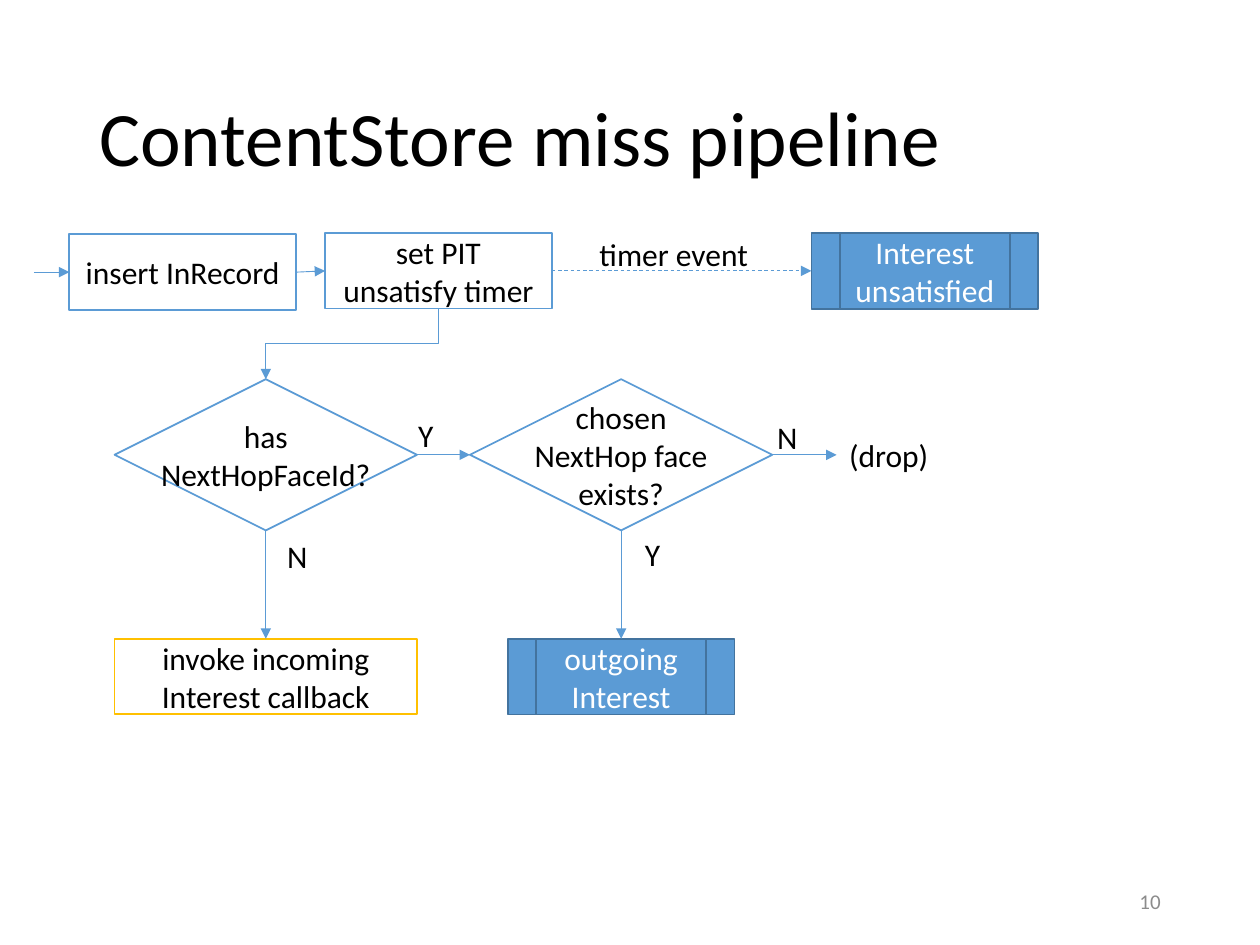
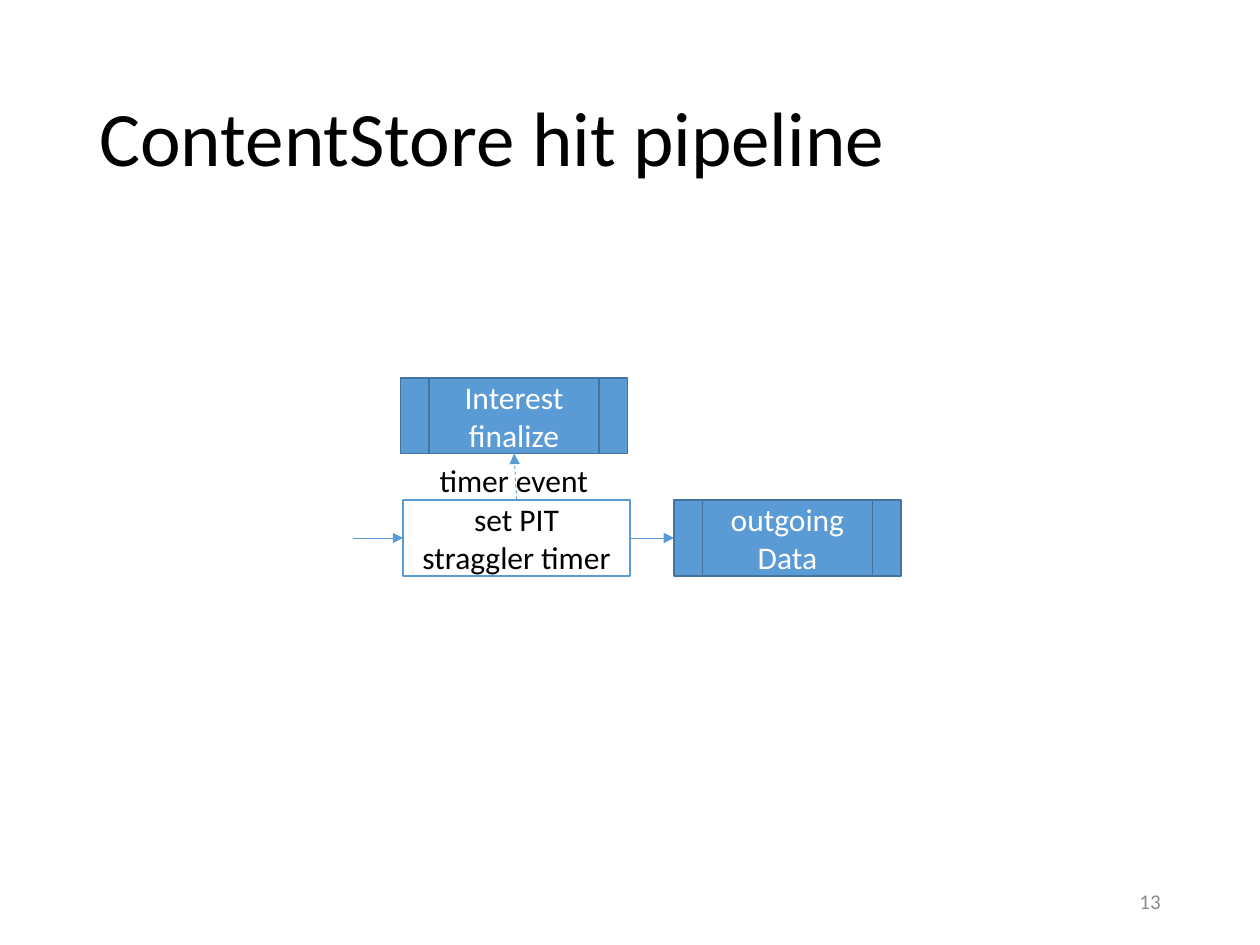
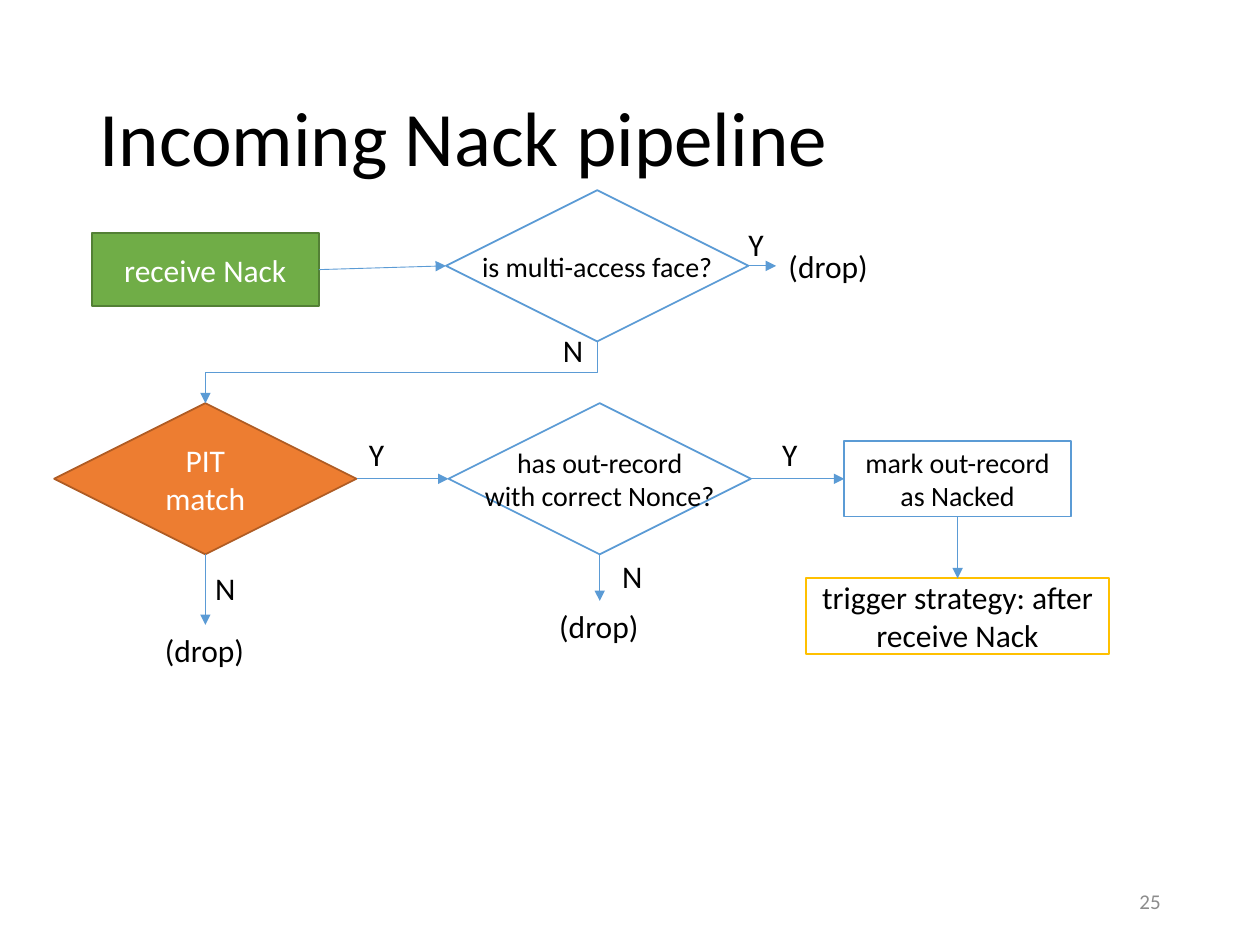
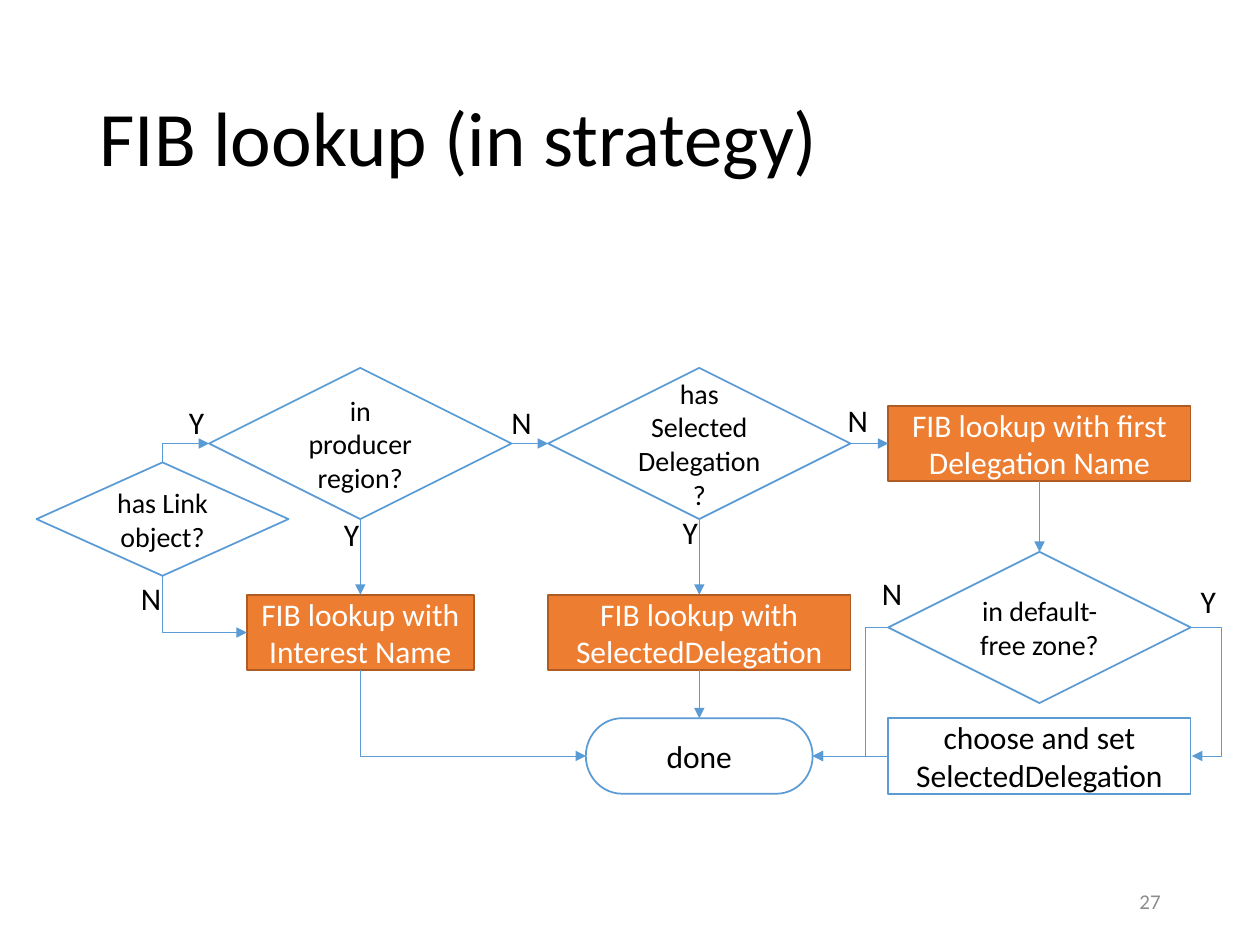
import dataclasses
import enum
import typing

import lxml.etree
import pptx
import pptx.dml.color
import pptx.enum.dml
import pptx.enum.shapes
import pptx.enum.text
import pptx.oxml.ns
import pptx.util

# The slide is a grid of 100 columns and 75 rows of square cells.
CELL = pptx.util.Inches(0.1)
COLUMNS, ROWS = 100, 75
FONT = "Calibri"
COLOURS = {
    "white": "FFFFFF", "black": "000000", "grey": "8C8C8C",
    "blue": "5B9BD5", "dark blue": "43739E", "gold": "FFC000",
    "orange": "ED7D31", "dark orange": "AF5C24",
    "green": "70AD47", "dark green": "538035",
}
Preset = pptx.enum.shapes.MSO_SHAPE
Align = pptx.enum.text.PP_ALIGN


class Side(enum.IntEnum):
    """Connection sites, numbered as the preset shapes number them."""
    TOP = 0
    LEFT = 1
    BOTTOM = 2
    RIGHT = 3


class Point(typing.NamedTuple):
    col: float
    row: float


class Size(typing.NamedTuple):
    cols: float
    rows: float


BOX, WIDE, DIAMOND = Size(18, 6), Size(24, 6), Size(24, 12)
LETTER_SIZES = {"Y": Size(3.2, 4), "N": Size(3.6, 4),
                "(drop)": Size(8.4, 4), "timer event": Size(14, 4)}


@dataclasses.dataclass(frozen=True)
class Style:
    preset: Preset
    fill: str = "white"
    line: str = "blue"
    text: str = "black"


STEP = Style(Preset.RECTANGLE)
CALLBACK = Style(Preset.RECTANGLE, line="gold")
TABLE_STEP = Style(Preset.RECTANGLE, "orange", "dark orange", "white")
ENTRY = Style(Preset.RECTANGLE, "green", "dark green", "white")
PIPELINE = Style(Preset.FLOWCHART_PREDEFINED_PROCESS, "blue", "dark blue", "white")
DECISION = Style(Preset.FLOWCHART_DECISION)
TABLE_DECISION = Style(Preset.FLOWCHART_DECISION, "orange", "dark orange", "white")
END = Style(Preset.FLOWCHART_TERMINATOR)


@dataclasses.dataclass(frozen=True)
class Node:
    key: str
    style: Style
    text: str
    at: Point
    size: Size = BOX
    points: int = 18
    wrap: bool = True


@dataclasses.dataclass(frozen=True)
class Label:
    text: str
    at: Point
    key: str = ""


@dataclasses.dataclass(frozen=True)
class Link:
    """An arrow between two nodes, given by key, or free points."""
    start: str | Point
    end: str | Point
    leave: Side = Side.RIGHT
    enter: Side = Side.LEFT
    dashed: bool = False
    elbow: str = ""
    bend: float | None = None


@dataclasses.dataclass(frozen=True)
class Flow:
    title: str
    number: int
    nodes: list[Node]
    links: list[Link]
    labels: list[Label]


DOWN = {"leave": Side.BOTTOM, "enter": Side.TOP}
TURN = {"leave": Side.BOTTOM, "elbow": "bentConnector2"}
STEP_DOWN = {**DOWN, "elbow": "bentConnector3"}

FLOWS = [
    Flow(
        "ContentStore miss pipeline", 10,
        [
            Node("insert", STEP, "insert InRecord", Point(5.5, 18.6)),
            Node("timer", STEP, "set PIT unsatisfy timer", Point(25.8, 18.5)),
            Node("unsatisfied", PIPELINE, "Interest unsatisfied", Point(64.4, 18.5)),
            Node("has hop", DECISION, "has\vNextHopFaceId?", Point(9.1, 30.1), DIAMOND, wrap=False),
            Node("face exists", DECISION, "chosen\vNextHop face\vexists?", Point(37.3, 30.1),
                 DIAMOND, wrap=False),
            Node("callback", CALLBACK, "invoke incoming Interest callback", Point(9.1, 50.7), WIDE),
            Node("outgoing", PIPELINE, "outgoing Interest", Point(40.3, 50.7)),
        ],
        [
            Link(Point(2.7, 21.6), "insert"),
            Link("insert", "timer"),
            Link("timer", "unsatisfied", dashed=True),
            Link("timer", "has hop", **STEP_DOWN),
            Link("has hop", "callback", **DOWN),
            Link("has hop", "face exists"),
            Link("face exists", "outgoing", **DOWN),
            Link("face exists", "drop"),
        ],
        [
            Label("timer event", Point(46.6, 18.2)),
            Label("(drop)", Point(66.4, 34.1), "drop"),
            Label("N", Point(60.7, 32.7)),
            Label("Y", Point(50.2, 42)),
            Label("Y", Point(32.2, 32.5)),
            Label("N", Point(21.8, 42.1)),
        ],
    ),
    Flow(
        "ContentStore hit pipeline", 13,
        [
            Node("outgoing", PIPELINE, "outgoing Data", Point(53.5, 39.7)),
            Node("timer", STEP, "set PIT straggler timer", Point(32, 39.7)),
            Node("finalize", PIPELINE, "Interest finalize", Point(31.8, 30)),
        ],
        [
            Link("timer", "finalize", Side.TOP, Side.BOTTOM, dashed=True),
            Link("timer", "outgoing"),
            Link(Point(28, 42.7), "timer"),
        ],
        [Label("timer event", Point(33.9, 36.1))],
    ),
    Flow(
        "Incoming Nack pipeline", 25,
        [
            Node("match", TABLE_DECISION, "PIT match", Point(4.3, 32), DIAMOND),
            Node("receive", ENTRY, "receive Nack", Point(7.3, 18.5), Size(18, 5.8)),
            Node("strategy", CALLBACK, "trigger strategy: after receive Nack",
                 Point(64, 45.9), WIDE),
            Node("mark", STEP, "mark out-record as Nacked", Point(67, 35), points=16),
            Node("nonce", DECISION, "has out-record\vwith correct Nonce?", Point(35.6, 32),
                 DIAMOND, 16, False),
            Node("multi-access", DECISION, "is multi-access face?", Point(35.4, 15.1),
                 DIAMOND, 16, False),
        ],
        [
            Link("receive", "multi-access"),
            Link("multi-access", "face drop"),
            Link("multi-access", "match", **STEP_DOWN),
            Link("match", "match drop", **DOWN),
            Link("match", "nonce"),
            Link("nonce", "nonce drop", **DOWN),
            Link("nonce", "mark"),
            Link("mark", "strategy", **DOWN),
        ],
        [
            Label("(drop)", Point(12.1, 49.6), "match drop"),
            Label("N", Point(16.1, 44.7)),
            Label("Y", Point(28.3, 34)),
            Label("(drop)", Point(43.4, 47.7), "nonce drop"),
            Label("N", Point(48.4, 43.7)),
            Label("Y", Point(61.1, 34)),
            Label("N", Point(43.7, 25.8)),
            Label("Y", Point(58.4, 17.4)),
            Label("(drop)", Point(61.6, 19.1), "face drop"),
        ],
    ),
    Flow(
        "FIB lookup (in strategy)", 27,
        [
            Node("by interest", TABLE_STEP, "FIB lookup with Interest Name", Point(19.6, 47.2)),
            Node("done", END, "done", Point(46.5, 57)),
            Node("in region", DECISION, "in producer region?", Point(16.6, 29.2), DIAMOND, 16),
            Node("has selected", DECISION, "has Selected\nDelegation?", Point(43.5, 29.2),
                 DIAMOND, 16),
            Node("by selected", TABLE_STEP, "FIB lookup with SelectedDelegation",
                 Point(43.5, 47.2), WIDE),
            Node("choose", STEP, "choose and set SelectedDelegation", Point(70.5, 57), WIDE),
            Node("by first", TABLE_STEP, "FIB lookup with first Delegation Name",
                 Point(70.5, 32.2), WIDE),
            Node("in zone", DECISION, "in default-free zone?", Point(70.5, 43.8), DIAMOND, 16),
            Node("has link", DECISION, "has Link object?", Point(2.9, 36.7), Size(20, 9), 16),
        ],
        [
            Link("has link", "in region", Side.TOP, elbow="bentConnector2"),
            Link("has link", "by interest", **TURN),
            Link("in region", "by interest", **DOWN),
            Link("in region", "has selected"),
            Link("has selected", "by selected", **DOWN),
            Link("has selected", "by first"),
            Link("by first", "in zone", **DOWN),
            Link("by interest", "done", **TURN),
            Link("by selected", "done", **DOWN),
            Link("choose", "done", Side.LEFT, Side.RIGHT),
            Link("in zone", "done", Side.LEFT, Side.RIGHT, elbow="bentConnector3", bend=68.7),
            Link("in zone", Point(94.6, 60), elbow="bentConnector3", bend=97),
        ],
        [
            Label("Y", Point(26.3, 40.4)),
            Label("N", Point(39.6, 31.5)),
            Label("N", Point(66.3, 31.3)),
            Label("Y", Point(53.2, 40.2)),
            Label("Y", Point(94.3, 45.7)),
            Label("N", Point(69, 45.1)),
            Label("N", Point(10.2, 45.5)),
            Label("Y", Point(14, 31.5)),
        ],
    ),
]


def cells(count: float) -> int:
    return round(count * CELL)


def colour(name: str) -> pptx.dml.color.RGBColor:
    return pptx.dml.color.RGBColor.from_string(COLOURS[name])


def write(shape, text: str, points: int, ink: str, align=Align.LEFT,
          wrap: bool = True, middle: bool = True, spacing: float | None = None) -> None:
    frame = shape.text_frame
    frame.text = text
    frame.word_wrap = wrap
    anchors = pptx.enum.text.MSO_ANCHOR
    frame.vertical_anchor = anchors.MIDDLE if middle else anchors.TOP
    for paragraph in frame.paragraphs:
        paragraph.alignment = align
        paragraph.line_spacing = spacing
        paragraph.font.name = FONT
        paragraph.font.size = pptx.util.Pt(points)
        paragraph.font.color.rgb = colour(ink)


def add_text_area(slide, at: Point, size: Size):
    return slide.shapes.add_textbox(*map(cells, (*at, *size)))


def draw_frame(slide, flow: Flow) -> None:
    """Draw what every slide has: its title and its number."""
    title = add_text_area(slide, Point(6.9, 4), Size(86.2, 14.5))
    write(title, flow.title, 44, "black", spacing=0.9)
    number = add_text_area(slide, Point(70.6, 69.5), Size(22.5, 4))
    write(number, str(flow.number), 12, "grey", Align.RIGHT)


def draw_node(slide, node: Node):
    shape = slide.shapes.add_shape(node.style.preset, *map(cells, (*node.at, *node.size)))
    shape.shadow.inherit = False
    shape.fill.solid()
    shape.fill.fore_color.rgb = colour(node.style.fill)
    shape.line.color.rgb = colour(node.style.line)
    shape.line.width = pptx.util.Pt(1)
    write(shape, node.text, node.points, node.style.text, Align.CENTER, node.wrap)
    return shape


def draw_label(slide, label: Label):
    area = add_text_area(slide, label.at, LETTER_SIZES[label.text])
    write(area, label.text, 18, "black", wrap=False, middle=False)
    area.text_frame.auto_size = pptx.enum.text.MSO_AUTO_SIZE.SHAPE_TO_FIT_TEXT
    return area


def shape_elbow(connector, link: Link) -> None:
    """Give the connector its preset, its bend and, if it leaves vertically, its turn."""
    properties = connector._element.spPr
    geometry = properties.find(pptx.oxml.ns.qn("a:prstGeom"))
    geometry.set("prst", link.elbow)
    dx = connector.end_x - connector.begin_x
    dy = connector.end_y - connector.begin_y
    if link.bend is not None:
        share = (cells(link.bend) - connector.begin_x) / dx
        guides = geometry.find(pptx.oxml.ns.qn("a:avLst"))
        lxml.etree.SubElement(guides, pptx.oxml.ns.qn("a:gd"),
                              name="adj1", fmla=f"val {round(share * 100000)}")
    if link.leave in (Side.TOP, Side.BOTTOM):
        quarters, sign = (3, -1) if dx > 0 and dy > 0 else (1, 1)
        middle_x, middle_y = connector.begin_x + dx / 2, connector.begin_y + dy / 2
        across, along = sign * dy / 2, -sign * dx / 2
        connector.begin_x, connector.end_x = round(middle_x - across), round(middle_x + across)
        connector.begin_y, connector.end_y = round(middle_y - along), round(middle_y + along)
        properties.find(pptx.oxml.ns.qn("a:xfrm")).set("rot", str(quarters * 5400000))


def draw_link(slide, link: Link, ends: dict) -> None:
    kinds = pptx.enum.shapes.MSO_CONNECTOR
    corners = [cells(value) for end in (link.start, link.end)
               for value in (end if isinstance(end, Point) else Point(0, 0))]
    connector = slide.shapes.add_connector(
        kinds.ELBOW if link.elbow else kinds.STRAIGHT, *corners)
    if isinstance(link.start, str):
        connector.begin_connect(ends[link.start], link.leave)
    if isinstance(link.end, str):
        connector.end_connect(ends[link.end], link.enter)
    if link.elbow:
        shape_elbow(connector, link)
    connector.line.color.rgb = colour("blue")
    connector.line.width = pptx.util.Pt(0.5)
    if link.dashed:
        connector.line.dash_style = pptx.enum.dml.MSO_LINE.DASH
    lxml.etree.SubElement(connector.line._get_or_add_ln(),
                          pptx.oxml.ns.qn("a:tailEnd"), type="triangle")
    lxml.etree.SubElement(connector._element.spPr, pptx.oxml.ns.qn("a:effectLst"))


def draw_flow(slide, flow: Flow) -> None:
    draw_frame(slide, flow)
    ends = {node.key: draw_node(slide, node) for node in flow.nodes}
    for label in flow.labels:
        area = draw_label(slide, label)
        if label.key:
            ends[label.key] = area
    for link in flow.links:
        draw_link(slide, link, ends)


def main() -> None:
    deck = pptx.Presentation()
    deck.slide_width, deck.slide_height = cells(COLUMNS), cells(ROWS)
    blank = deck.slide_layouts[6]
    for flow in FLOWS:
        draw_flow(deck.slides.add_slide(blank), flow)
    deck.save("out.pptx")


if __name__ == "__main__":
    main()
